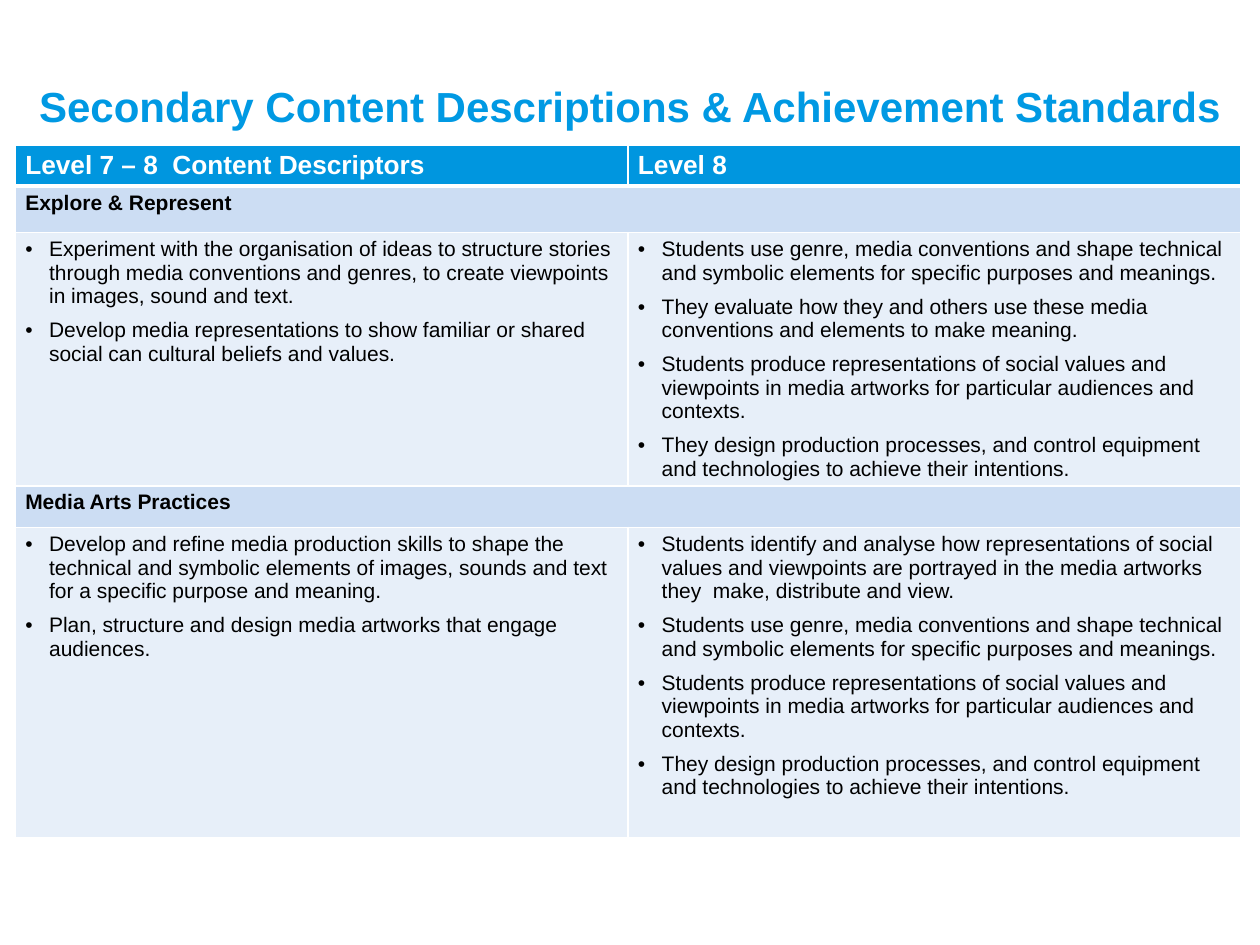
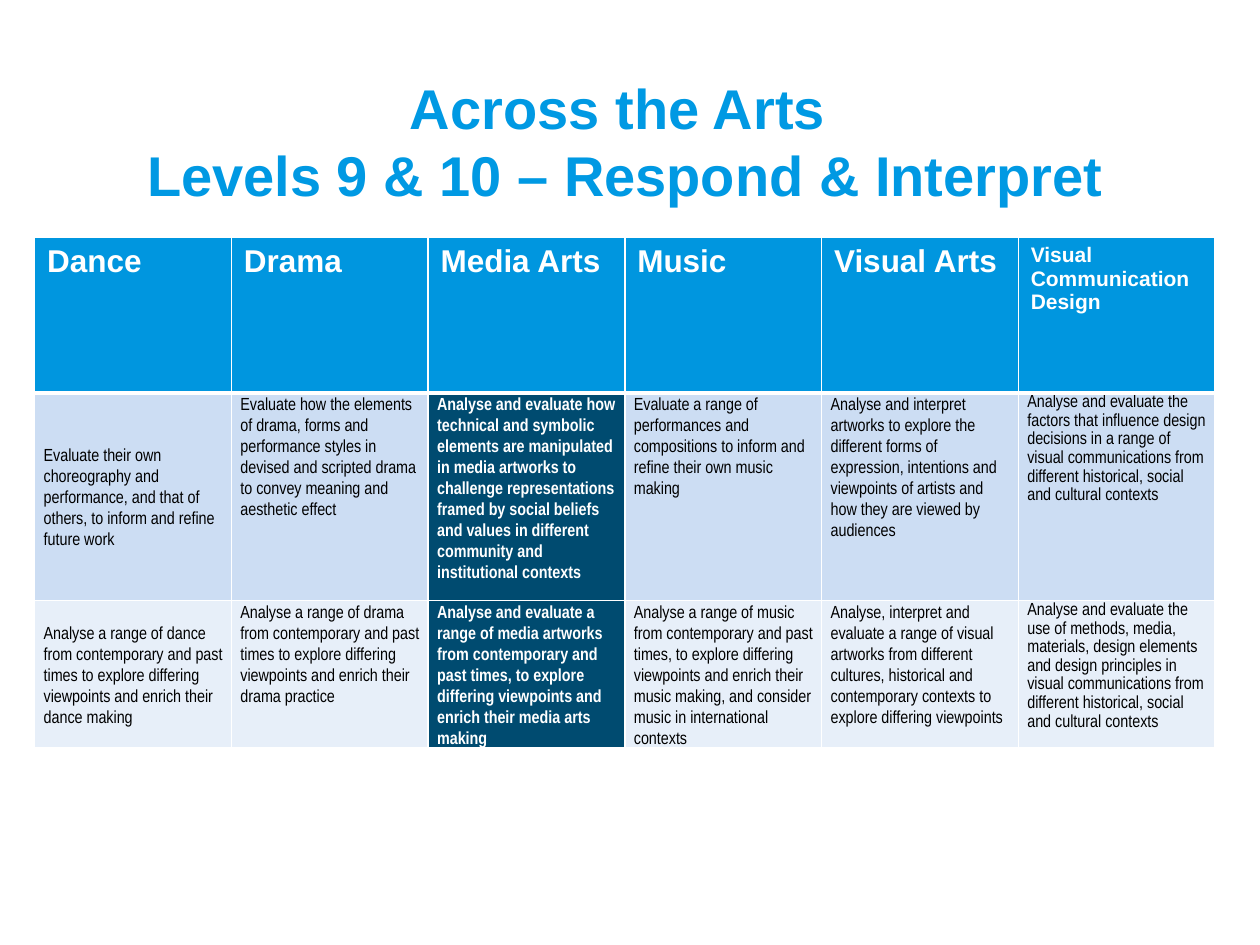
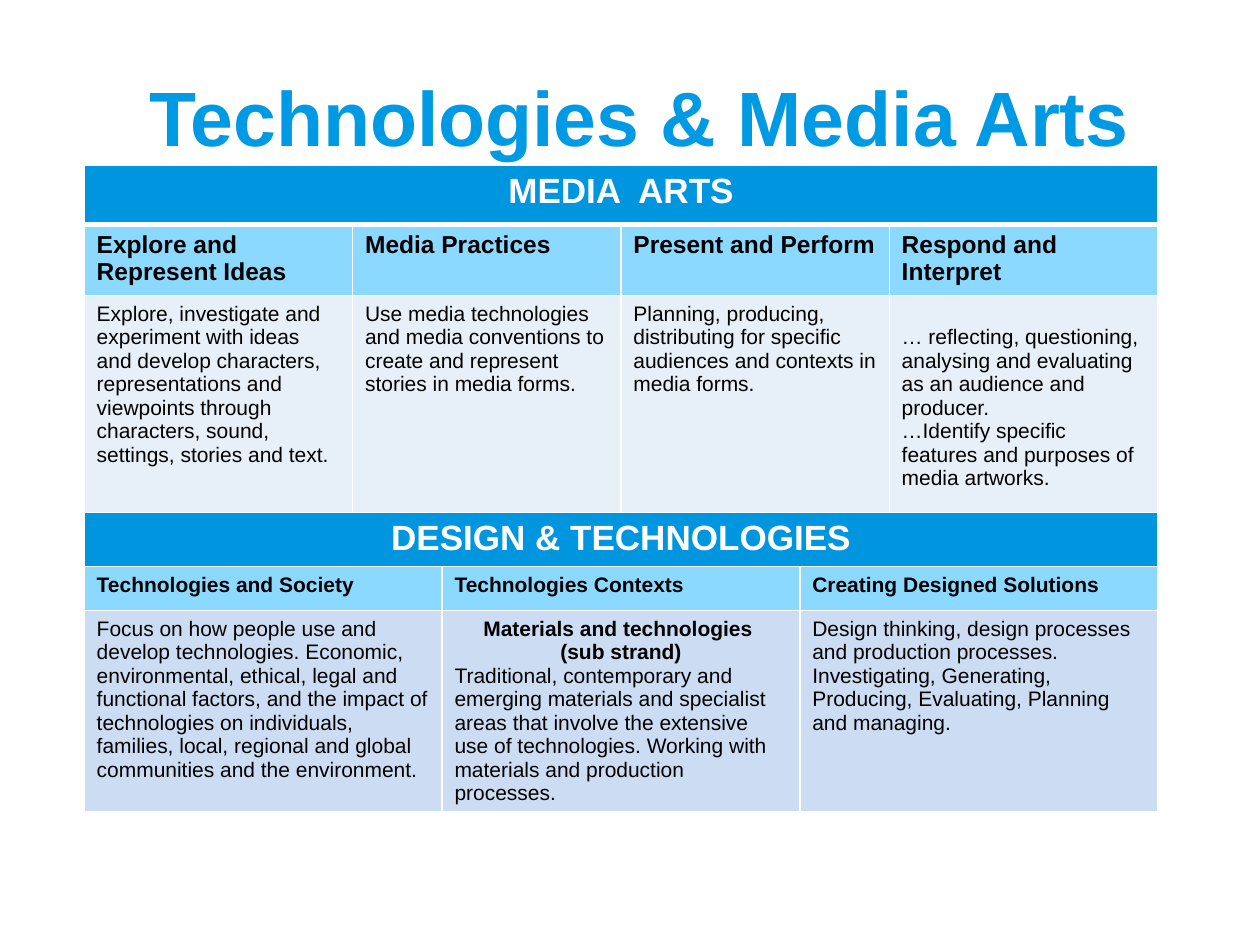
from dataclasses import dataclass, replace
from typing import Optional

from lxml.etree import SubElement
from pptx import Presentation
from pptx.dml.color import RGBColor
from pptx.enum.text import MSO_ANCHOR, MSO_AUTO_SIZE, PP_ALIGN
from pptx.oxml import parse_xml
from pptx.oxml.ns import nsdecls, qn
from pptx.util import Cm, Pt


@dataclass(frozen=True)
class Theme:
    """Colours, fonts and type sizes that the slides share."""
    title: str = "0099E3"
    header: str = "0096DF"
    subheader: str = "8CD9FF"
    band: str = "CCDDF3"
    pale: str = "E7EFF9"
    highlight: str = "004B70"
    white: str = "FFFFFF"
    black: str = "000000"
    font: str = "Arial"
    narrow_font: str = "Arial Narrow"
    body_size: int = 12
    narrow_size: int = 10
    strand_size: int = 14
    level_size: int = 15
    subject_size: int = 18
    area_size: int = 20
    border: int = 1
    header_border: int = 3


THEME = Theme()


@dataclass(frozen=True)
class CellStyle:
    """Look of a table cell and its paragraphs; margins are in centimetres."""
    fill: str
    size: int = THEME.body_size
    color: str = THEME.black
    bold: bool = False
    font: str = THEME.font
    align: PP_ALIGN = PP_ALIGN.LEFT
    anchor: MSO_ANCHOR = MSO_ANCHOR.TOP
    side_margin: float = 0.25
    top_margin: float = 0.13
    bottom_margin: float = 0.13
    space_after: int = 0
    line_spacing: Optional[object] = None
    bulleted: bool = False


@dataclass(frozen=True)
class Cell:
    """Content of one cell; a paragraph is a text or a pair of text and style."""
    style: CellStyle
    paragraphs: tuple
    span: int = 1


HEADER = CellStyle(THEME.header, THEME.subject_size, THEME.white, bold=True)
AREA = replace(HEADER, size=THEME.area_size, align=PP_ALIGN.CENTER)
SUBHEADER = CellStyle(THEME.subheader, bold=True)
STRAND = replace(SUBHEADER, size=THEME.strand_size)
PALE = CellStyle(THEME.pale)
BAND = CellStyle(THEME.band)
LEVEL = replace(HEADER, size=THEME.level_size, side_margin=0.2, top_margin=0.1, bottom_margin=0.1)
SECTION = replace(LEVEL, fill=THEME.band, size=THEME.body_size, color=THEME.black)
BULLETS = replace(SECTION, fill=THEME.pale, bold=False, space_after=6, bulleted=True)
NARROW = CellStyle(THEME.band, THEME.narrow_size, font=THEME.narrow_font, side_margin=0.18,
                   top_margin=0, bottom_margin=0, space_after=4, line_spacing=Pt(12))

USE_GENRE = ("Students use genre, media conventions and shape technical and symbolic elements "
             "for specific purposes and meanings.")
PRODUCE = ("Students produce representations of social values and viewpoints in media artworks "
           "for particular audiences and contexts.")
DESIGN = ("They design production processes, and control equipment and technologies "
          "to achieve their intentions.")

SUBJECTS = ("Dance", "Drama", "Media Arts", "Music", "Visual Arts", "Visual Communication Design")
RESPONSES = (
    (
        "Evaluate their own choreography and performance, and that of others, to inform and "
        "refine future work",
        "Evaluate how the elements of drama, forms and performance styles in devised and "
        "scripted drama to convey meaning and aesthetic effect",
        "Analyse and evaluate how technical and symbolic elements are manipulated in media "
        "artworks to challenge representations framed by social beliefs and values in "
        "different community and institutional contexts",
        "Evaluate a range of performances and compositions to inform and refine their own "
        "music making",
        "Analyse and interpret artworks to explore the different forms of expression, "
        "intentions and viewpoints of artists and how they are viewed by audiences",
        "Analyse and evaluate the factors that influence design decisions in a range of visual "
        "communications from different historical, social and cultural contexts",
    ),
    (
        "Analyse a range of dance from contemporary and past times to explore differing "
        "viewpoints and enrich their dance making",
        "Analyse a range of drama from contemporary and past times to explore differing "
        "viewpoints and enrich their drama practice",
        "Analyse and evaluate a range of media artworks from contemporary and past times, to "
        "explore differing viewpoints and enrich their media arts making",
        "Analyse a range of music from contemporary and past times, to explore differing "
        "viewpoints and enrich their music making, and consider music in international contexts",
        "Analyse, interpret and evaluate a range of visual artworks from different cultures, "
        "historical and contemporary contexts to explore differing viewpoints",
        "Analyse and evaluate the use of methods, media, materials, design elements and design "
        "principles in visual communications from different historical, social and cultural "
        "contexts",
    ),
)


def add_run(paragraph, text, font, size, color, bold):
    """Add one formatted run to a paragraph."""
    run = paragraph.add_run()
    run.text = text
    run.font.name = font
    run.font.size = Pt(size)
    run.font.bold = bold
    run.font.color.rgb = RGBColor.from_string(color)


def add_titled_slide(presentation, lines, size, left, top, width, height):
    """Add a title-only slide with its title placed and formatted."""
    slide = presentation.slides.add_slide(presentation.slide_layouts[5])
    title = slide.shapes.title
    title.left, title.top, title.width, title.height = Cm(left), Cm(top), Cm(width), Cm(height)
    frame = title.text_frame
    frame.word_wrap = True
    frame.auto_size = MSO_AUTO_SIZE.NONE
    frame.vertical_anchor = MSO_ANCHOR.MIDDLE
    paragraph = frame.paragraphs[0]
    paragraph.alignment = PP_ALIGN.CENTER
    for index, line in enumerate(lines):
        if index:
            paragraph.add_line_break()
        add_run(paragraph, line, THEME.font, size, THEME.title, True)
    return slide


def add_bullet(paragraph):
    """Give a paragraph a hanging round bullet."""
    properties = paragraph._p.get_or_add_pPr()
    indent = Cm(0.48)
    properties.set("marL", str(indent))
    properties.set("indent", str(-indent))
    SubElement(properties, qn("a:buFont"), typeface=THEME.font)
    SubElement(properties, qn("a:buChar"), char="•")


def set_borders(table_cell, top, bottom):
    """Draw white lines on the four sides of a cell."""
    properties = table_cell._tc.get_or_add_tcPr()
    sides = {"lnL": THEME.border, "lnR": THEME.border, "lnT": top, "lnB": bottom}
    for index, (side, width) in enumerate(sides.items()):
        line = parse_xml(
            f'<a:{side} {nsdecls("a")} w="{Pt(width)}"><a:solidFill>'
            f'<a:srgbClr val="{THEME.white}"/></a:solidFill></a:{side}>')
        properties.insert(index, line)


def fill_cell(table_cell, cell):
    """Write the paragraphs of a cell."""
    style = cell.style
    table_cell.margin_left = table_cell.margin_right = Cm(style.side_margin)
    table_cell.margin_top = Cm(style.top_margin)
    table_cell.margin_bottom = Cm(style.bottom_margin)
    table_cell.vertical_anchor = style.anchor
    frame = table_cell.text_frame
    for index, content in enumerate(cell.paragraphs):
        text, look = content if isinstance(content, tuple) else (content, style)
        paragraph = frame.add_paragraph() if index else frame.paragraphs[0]
        paragraph.alignment = look.align
        if look.line_spacing:
            paragraph.line_spacing = look.line_spacing
        paragraph.space_after = Pt(look.space_after)
        if look.bulleted:
            add_bullet(paragraph)
        add_run(paragraph, text, look.font, look.size, look.color, look.bold)


def add_grid(slide, left, top, width, column_shares, row_heights, rows):
    """Add a table whose columns share its width in the given proportions."""
    shape = slide.shapes.add_table(len(row_heights), len(column_shares), Cm(left), Cm(top),
                                   Cm(width), Cm(sum(row_heights)))
    table = shape.table
    table.first_row = table.horz_banding = False
    for column, share in zip(table.columns, column_shares):
        column.width = Cm(width * share / sum(column_shares))
    for row, height in zip(table.rows, row_heights):
        row.height = Cm(height)
    for row_index, cells in enumerate(rows):
        top_border = THEME.header_border if row_index == 1 else THEME.border
        bottom_border = THEME.header_border if row_index == 0 else THEME.border
        column_index = 0
        for cell in cells:
            last = column_index + cell.span - 1
            first_cell = table.cell(row_index, column_index)
            if cell.span > 1:
                first_cell.merge(table.cell(row_index, last))
            for covered in range(column_index, last + 1):
                table_cell = table.cell(row_index, covered)
                set_borders(table_cell, top_border, bottom_border)
                table_cell.fill.solid()
                table_cell.fill.fore_color.rgb = RGBColor.from_string(cell.style.fill)
            fill_cell(first_cell, cell)
            column_index = last + 1


def response_style(subject_index, fill):
    """Return the style of a response in the column of a subject."""
    style = replace(NARROW, fill=fill)
    subject = SUBJECTS[subject_index]
    if subject == "Dance":
        return replace(style, anchor=MSO_ANCHOR.MIDDLE)
    if subject == "Media Arts":
        return replace(style, fill=THEME.highlight, color=THEME.white, bold=True)
    if subject == SUBJECTS[-1]:
        return replace(style, line_spacing=1.15, space_after=6)
    return style


def add_standards_slide(presentation):
    """Add the slide of content descriptions and achievement standards."""
    slide = add_titled_slide(presentation, ["Secondary Content Descriptions & Achievement Standards"],
                             24, 0.5, 1.12, 24.4, 2.03)
    rows = [
        [Cell(LEVEL, ("Level 7 – 8  Content Descriptors",)), Cell(LEVEL, ("Level 8",))],
        [Cell(SECTION, ("Explore & Represent",), 2)],
        [
            Cell(BULLETS, (
                "Experiment with the organisation of ideas to structure stories through media "
                "conventions and genres, to create viewpoints in images, sound and text.",
                "Develop media representations to show familiar or shared social can cultural "
                "beliefs and values.")),
            Cell(BULLETS, (
                USE_GENRE,
                "They evaluate how they and others use these media conventions and elements to "
                "make meaning.",
                PRODUCE, DESIGN)),
        ],
        [Cell(SECTION, ("Media Arts Practices",), 2)],
        [
            Cell(BULLETS, (
                "Develop and refine media production skills to shape the technical and symbolic "
                "elements of images, sounds and text for a specific purpose and meaning.",
                "Plan, structure and design media artworks that engage audiences.")),
            Cell(BULLETS, (
                "Students identify and analyse how representations of social values and "
                "viewpoints are portrayed in the media artworks they  make, distribute and view.",
                USE_GENRE, PRODUCE, DESIGN)),
        ],
    ]
    add_grid(slide, 0.31, 2.93, 24.7, (1, 1), (0.82, 0.94, 5.1, 0.84, 6.26), rows)


def add_arts_slide(presentation):
    """Add the slide that compares responses across the arts."""
    slide = add_titled_slide(presentation, ["Across the Arts ", "Levels 9 & 10 – Respond & Interpret"],
                             32, 0.61, 1.93, 24, 1.8)
    small_header = replace(HEADER, size=THEME.body_size)
    rows = [[Cell(small_header if subject == SUBJECTS[-1] else HEADER, (subject,))
             for subject in SUBJECTS]]
    for fill, responses in zip((THEME.band, THEME.pale), RESPONSES):
        rows.append([Cell(response_style(index, fill), (response,))
                     for index, response in enumerate(responses)])
    add_grid(slide, 0.7, 4.78, 23.8, (1,) * len(SUBJECTS), (3.14, 4.19, 2.97), rows)


def add_technologies_slide(presentation):
    """Add the slide that sets media arts beside design and technologies."""
    slide = add_titled_slide(presentation, ["Technologies & Media Arts"], 44, 2.1, 0.74, 21.6, 3.18)
    centred = replace(BAND, bold=True, align=PP_ALIGN.CENTER)
    strands = ("Explore and Represent Ideas", "Media Practices", "Present and Perform",
               "Respond and Interpret")
    spans = (1, 2, 2, 1)
    rows = [
        [Cell(AREA, ("MEDIA  ARTS",), 6)],
        [Cell(STRAND, (strand,), span) for strand, span in zip(strands, spans)],
        [
            Cell(PALE, (
                "Explore, investigate and experiment with ideas and develop characters, "
                "representations and viewpoints through characters, sound, settings, stories "
                "and text.",)),
            Cell(PALE, (
                "Use media technologies and media conventions to create and represent stories "
                "in media forms.",), 2),
            Cell(PALE, (
                "Planning, producing, distributing for specific audiences and contexts in "
                "media forms.",), 2),
            Cell(replace(PALE, top_margin=0.6), (
                "… reflecting, questioning, analysing and evaluating as an audience and producer.",
                "…Identify specific features and purposes of media artworks.")),
        ],
        [Cell(AREA, ("DESIGN & TECHNOLOGIES",), 6)],
        [Cell(SUBHEADER, (heading,), 2) for heading in
         ("Technologies and Society", "Technologies Contexts", "Creating Designed Solutions")],
        [
            Cell(BAND, (
                "Focus on how people use and develop technologies. Economic, environmental, "
                "ethical, legal and functional factors, and the impact of technologies on "
                "individuals, families, local, regional and global communities and the "
                "environment.",), 2),
            Cell(BAND, (
                ("Materials and technologies ", centred),
                ("(sub strand)", centred),
                "Traditional, contemporary and emerging materials and specialist areas that "
                "involve the extensive use of technologies. Working with materials and "
                "production processes."), 2),
            Cell(BAND, (
                "Design thinking, design processes and production processes.",
                "Investigating, Generating, Producing, Evaluating, Planning and managing."), 2),
        ],
    ]
    add_grid(slide, 1.7, 3.34, 21.64, (3, 1, 2, 2, 1, 3), (1.19, 1.43, 4.37, 1.09, 0.89, 4.05), rows)


def main():
    """Build the presentation and save it."""
    presentation = Presentation()
    presentation.slide_width, presentation.slide_height = Cm(25.4), Cm(19.05)
    add_standards_slide(presentation)
    add_arts_slide(presentation)
    add_technologies_slide(presentation)
    presentation.save("out.pptx")


if __name__ == "__main__":
    main()
